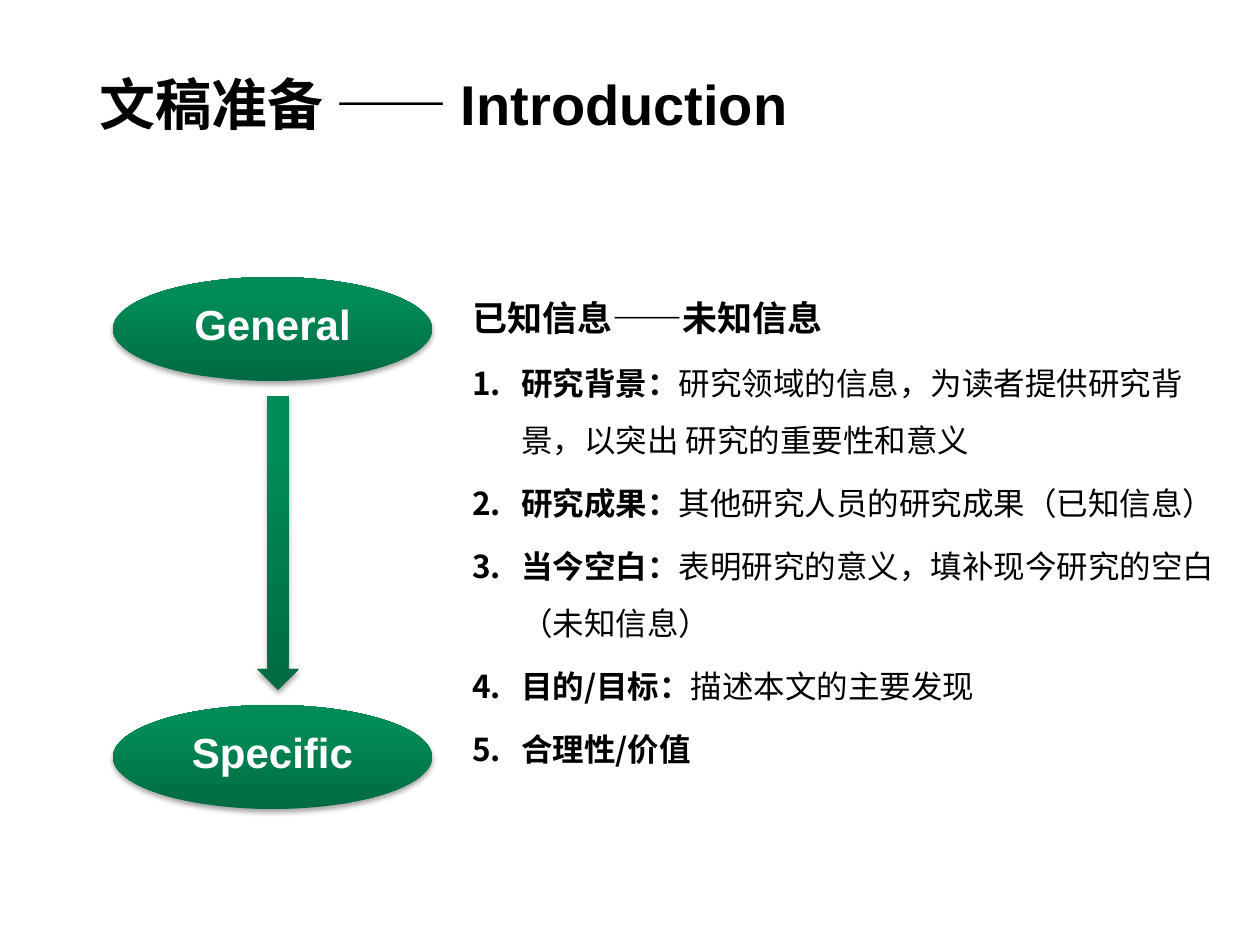
"""Build the slide on how an introduction moves from general to specific."""
from copy import deepcopy

from lxml import etree
from pptx import Presentation
from pptx import util as u
from pptx.dml.color import RGBColor
from pptx.enum import shapes, text
from pptx.oxml.ns import qn

BLACK = RGBColor(0x00, 0x00, 0x00)
WHITE = RGBColor(0xFF, 0xFF, 0xFF)
GREEN_STOPS = (
    (0, RGBColor(0x00, 0x6B, 0x43)),
    (0.8, RGBColor(0x00, 0x8B, 0x57)),
    (1, RGBColor(0x00, 0x8B, 0x58)),
)
CHINESE_FONT = "Noto Sans CJK SC"
LATIN_FONT = "Arial"
LINE_SPACING = 1.5
PX = 914400 / 126

ITEMS = (
    ("研究背景：", "研究领域的信息，为读者提供研究背 景，以突出 研究的重要性和意义"),
    ("研究成果：", "其他研究人员的研究成果（已知信息）"),
    ("当今空白：", "表明研究的意义，填补现今研究的空白（未知信息）"),
    ("目的/目标：", "描述本文的主要发现"),
    ("合理性/价值", ""),
)


def px(*lengths):
    return [u.Emu(round(length * PX)) for length in lengths]


class SlideBuilder:
    """Hold the style and the current slide."""

    def __init__(self, presentation):
        self.slide = presentation.slides.add_slide(presentation.slide_layouts[5])

    def frame(self, shape, anchor):
        frame = shape.text_frame
        frame.word_wrap = True
        frame.auto_size = text.MSO_AUTO_SIZE.NONE
        frame.vertical_anchor = anchor
        frame.margin_left = frame.margin_top = 0
        frame.margin_right = frame.margin_bottom = 0
        return frame

    def run(self, paragraph, words, size, bold=True, font=CHINESE_FONT, color=BLACK):
        run = paragraph.add_run()
        run.text = words
        run.font.size = u.Pt(size)
        run.font.bold = bold
        run.font.color.rgb = color
        run.font.name = font
        etree.SubElement(run.font._element, qn("a:ea"), typeface=CHINESE_FONT)

    def title(self, box, chinese, latin):
        shape = self.slide.shapes.title
        shape.left, shape.top, shape.width, shape.height = px(*box)
        paragraph = self.frame(shape, text.MSO_ANCHOR.BOTTOM).paragraphs[0]
        paragraph.alignment = text.PP_ALIGN.LEFT
        self.run(paragraph, chinese, 32)
        self.run(paragraph, latin, 32, font=LATIN_FONT)

    def green_shape(self, kind, box, label=""):
        shape = self.slide.shapes.add_shape(kind, *px(*box))
        shape.line.fill.background()
        shape.fill.gradient()
        shape.fill.gradient_angle = 90
        stop_list = shape._element.spPr.find(".//" + qn("a:gsLst"))
        stop_list.append(deepcopy(stop_list[-1]))
        for stop, (position, color) in zip(shape.fill.gradient_stops, GREEN_STOPS):
            stop.position = position
            stop.color.rgb = color
        self.shadow(shape)
        if label:
            shape.text_frame.vertical_anchor = text.MSO_ANCHOR.TOP
            paragraph = shape.text_frame.paragraphs[0]
            paragraph.alignment = text.PP_ALIGN.CENTER
            self.run(paragraph, label, 24, font=LATIN_FONT, color=WHITE)

    def shadow(self, shape):
        shape.shadow.inherit = False
        effects = shape._element.spPr.find(qn("a:effectLst"))
        outer = etree.SubElement(
            effects, qn("a:outerShdw"), blurRad=str(u.Pt(3.1)),
            dist=str(u.Pt(1.8)), dir="5400000", rotWithShape="0")
        color = etree.SubElement(outer, qn("a:srgbClr"), val="000000")
        etree.SubElement(color, qn("a:alpha"), val="35000")

    def numbered_list(self, box, heading, items):
        shape = self.slide.shapes.add_textbox(*px(*box))
        frame = self.frame(shape, text.MSO_ANCHOR.TOP)
        frame.paragraphs[0].line_spacing = LINE_SPACING
        self.run(frame.paragraphs[0], heading, 20)
        indent, = px(49)
        for term, detail in items:
            paragraph = frame.add_paragraph()
            paragraph.line_spacing = LINE_SPACING
            paragraph.space_before = u.Pt(3.6)
            properties = paragraph._p.get_or_add_pPr()
            properties.set("marL", str(indent))
            properties.set("indent", str(-indent))
            etree.SubElement(properties, qn("a:buFont"), typeface=CHINESE_FONT)
            etree.SubElement(properties, qn("a:buAutoNum"), type="arabicPeriod")
            self.run(paragraph, term, 18)
            if detail:
                self.run(paragraph, detail, 18, bold=False)


def main():
    presentation = Presentation()
    presentation.slide_width, presentation.slide_height = px(1260, 945)
    builder = SlideBuilder(presentation)
    builder.title((99, 3, 1017, 134), "文稿准备 —— ", "Introduction")
    builder.numbered_list((472, 276, 749, 665), "已知信息——未知信息", ITEMS)
    for label, top in (("General", 277), ("Specific", 705)):
        builder.green_shape(shapes.MSO_SHAPE.OVAL, (113, top, 319, 104), label)
    builder.green_shape(shapes.MSO_SHAPE.DOWN_ARROW, (257, 396, 42, 294))
    presentation.save("out.pptx")


if __name__ == "__main__":
    main()
